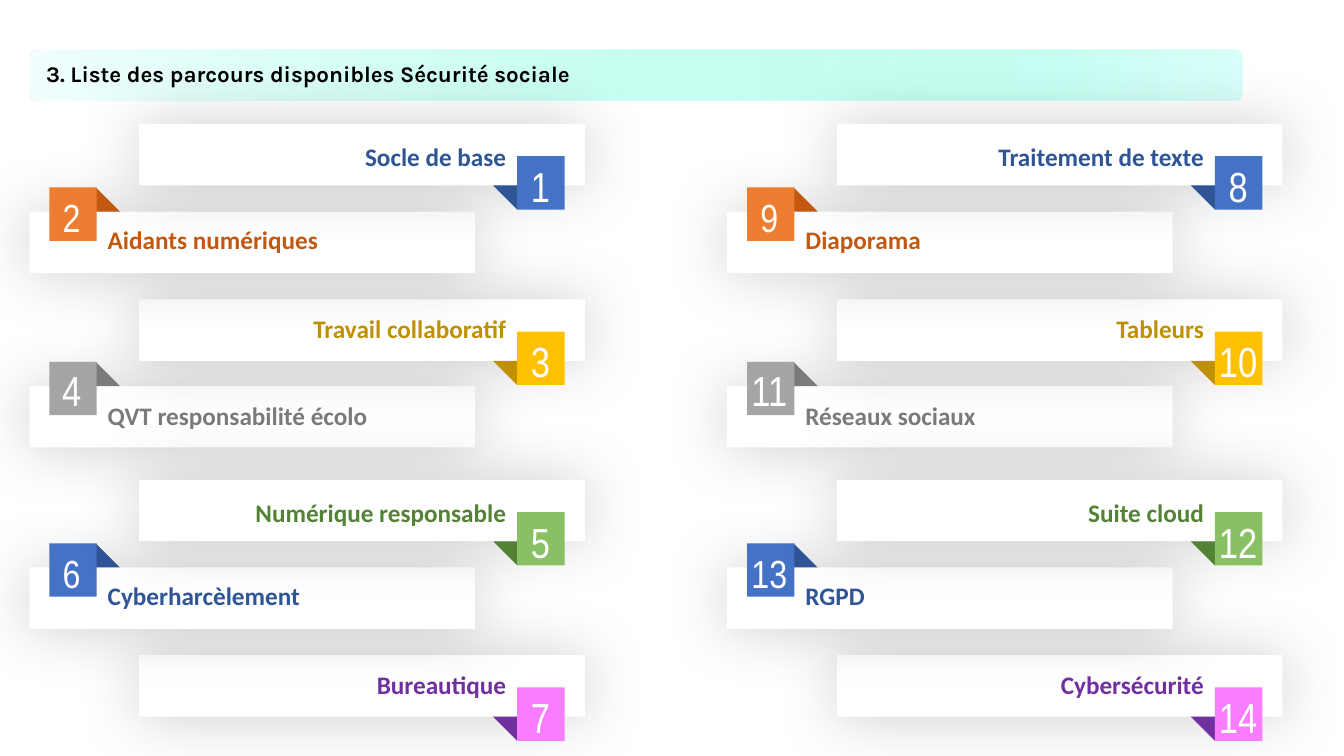
"""Build the slide listing the fourteen training paths in two zigzag columns."""
import pptx
import pptx.dml.color
import pptx.enum.shapes
import pptx.enum.text
import pptx.oxml
import pptx.oxml.ns
import pptx.util

Inches = pptx.util.Inches
RGBColor = pptx.dml.color.RGBColor
Shape = pptx.enum.shapes.MSO_SHAPE
Align = pptx.enum.text.PP_ALIGN

BLACK = RGBColor(0x00, 0x00, 0x00)
WHITE = RGBColor(0xFF, 0xFF, 0xFF)
BLUE = RGBColor(0x44, 0x72, 0xC4)
DARK_BLUE = RGBColor(0x2F, 0x55, 0x97)
ORANGE = RGBColor(0xED, 0x7D, 0x31)
DARK_ORANGE = RGBColor(0xC5, 0x5A, 0x11)
RUST = RGBColor(0xC3, 0x59, 0x11)
YELLOW = RGBColor(0xFF, 0xC0, 0x00)
DARK_YELLOW = RGBColor(0xBF, 0x90, 0x00)
GREY = RGBColor(0xA5, 0xA5, 0xA5)
DARK_GREY = RGBColor(0x7C, 0x7C, 0x7C)
TEXT_GREY = RGBColor(0x7B, 0x7B, 0x7B)
GREEN = RGBColor(0x89, 0xC0, 0x64)
DARK_GREEN = RGBColor(0x54, 0x82, 0x35)
PINK = RGBColor(0xF9, 0x7D, 0xFF)
PURPLE = RGBColor(0x70, 0x30, 0xA0)

TITLE = "3. Liste des parcours disponibles Sécurité sociale"
TITLE_STOPS = [(0, "F3FFFE", 100), (74, "8DFFE4", 50), (83, "8DFFE7", 50), (100, "B3FFF4", 50)]

COLUMNS = [
    (0.29, 1, ["Socle de base", "Aidants numériques", "Travail collaboratif",
               "QVT responsabilité écolo", "Numérique responsable",
               "Cyberharcèlement", "Bureautique"]),
    (7.21, 8, ["Traitement de texte", "Diaporama", "Tableurs", "Réseaux sociaux",
               "Suite cloud", "RGPD", "Cybersécurité"]),
]

# Each row: bar top, label offset, number offset, number size, line spacing, colours
ROWS = [
    (1.23, 0.12, 0.41, 30, 0.8, (BLUE, DARK_BLUE, DARK_BLUE)),
    (2.10, 0.08, -0.23, 28, 1.0, (ORANGE, DARK_ORANGE, RUST)),
    (2.97, 0.09, 0.41, 30, 0.8, (YELLOW, DARK_YELLOW, DARK_YELLOW)),
    (3.83, 0.09, -0.17, 30, 0.8, (GREY, DARK_GREY, TEXT_GREY)),
    (4.76, 0.12, 0.41, 30, 0.8, (GREEN, DARK_GREEN, DARK_GREEN)),
    (5.63, 0.08, -0.23, 28, 1.0, (BLUE, DARK_BLUE, DARK_BLUE)),
    (6.50, 0.09, 0.41, 30, 0.8, (PINK, PURPLE, PURPLE)),
]
STACKING = [3, 2, 1, 0, 6, 5, 4]

LEFT_SIDE = {"bar": 0, "label": 0.68, "badge": (0.2, -0.24), "fold": (0.66, -0.24),
             "turn": 0, "number": 0.08, "align": Align.LEFT}
RIGHT_SIDE = {"bar": 1.09, "label": 1.09, "badge": (4.84, 0.32), "fold": (4.6, 0.61),
              "turn": 180, "number": 4.73, "align": Align.RIGHT}


def drawing_xml(markup):
    """Parse one drawing element."""
    return pptx.oxml.parse_xml(markup.replace(" ", f" {pptx.oxml.ns.nsdecls('a')} ", 1))


def add_block(shapes, kind, left, top, width, height, color=None):
    """Add a preset shape without outline or shadow."""
    block = shapes.add_shape(kind, Inches(left), Inches(top), Inches(width), Inches(height))
    block.shadow.inherit = False
    block.line.fill.background()
    if color is not None:
        block.fill.solid()
        block.fill.fore_color.rgb = color
    return block


def add_text(shapes, text, left, top, width, height, color, align, spacing, **font):
    """Add a one-line text box."""
    box = shapes.add_textbox(Inches(left), Inches(top), Inches(width), Inches(height))
    box.text_frame.word_wrap = True
    box.text_frame.auto_size = pptx.enum.text.MSO_AUTO_SIZE.SHAPE_TO_FIT_TEXT
    para = box.text_frame.paragraphs[0]
    para.alignment = align
    para.line_spacing = spacing
    span = para.add_run()
    span.text = text
    for name, value in font.items():
        setattr(span.font, name, value)
    span.font.color.rgb = color


def add_soft_shadow(block):
    """Surround a block with a wide, faint shadow."""
    effects = block._element.spPr.find(pptx.oxml.ns.qn("a:effectLst"))
    effects.append(drawing_xml(
        f'<a:outerShdw blurRad="{pptx.util.Pt(47)}" dist="0" algn="ctr" rotWithShape="0">'
        '<a:srgbClr val="000000"><a:alpha val="20000"/></a:srgbClr></a:outerShdw>'))


def add_title(shapes):
    """Add the heading on its gradient band."""
    band = add_block(shapes, Shape.ROUNDED_RECTANGLE, 0.29, 0.49, 12.03, 0.51)
    band.fill.gradient()
    band.fill.gradient_angle = 0
    stops = next(band._element.spPr.iter(pptx.oxml.ns.qn("a:gsLst")))
    for stop in list(stops):
        stops.remove(stop)
    for place, color, alpha in TITLE_STOPS:
        stops.append(drawing_xml(
            f'<a:gs pos="{place * 1000}"><a:srgbClr val="{color}">'
            f'<a:alpha val="{alpha * 1000}"/></a:srgbClr></a:gs>'))
    add_text(shapes, TITLE, 0.36, 0.55, 11.67, 0.37, BLACK, Align.LEFT, 1.0,
             name="Karla", size=pptx.util.Pt(16), bold=True)


def add_path(shapes, left, number, label, row, side):
    """Add one bar with its label, folded corner and numbered badge."""
    top, label_drop, number_drop, number_size, spacing, colors = row
    badge_color, fold_color, label_color = colors
    bar = add_block(shapes, Shape.RECTANGLE, left + side["bar"], top, 4.42, 0.61, WHITE)
    add_soft_shadow(bar)
    add_text(shapes, label, left + side["label"], top + label_drop, 3.74, 0.4,
             label_color, side["align"], 1.0,
             name="Calibri", size=pptx.util.Pt(18), bold=True)
    across, down = side["fold"]
    fold = add_block(shapes, Shape.RIGHT_TRIANGLE, left + across, top + down,
                     0.24, 0.24, fold_color)
    fold.rotation = side["turn"]
    across, down = side["badge"]
    add_block(shapes, Shape.RECTANGLE, left + across, top + down, 0.47, 0.53, badge_color)
    add_text(shapes, str(number), left + side["number"], top + number_drop, 0.68, 0.53,
             WHITE, Align.CENTER, spacing,
             name="Arial Narrow", size=pptx.util.Pt(number_size))


def main():
    """Create and save the deck."""
    deck = pptx.Presentation()
    deck.slide_width, deck.slide_height = Inches(13.33), Inches(7.5)
    page = deck.slides.add_slide(deck.slide_layouts[6])
    add_title(page.shapes)
    for left, first, labels in reversed(COLUMNS):
        column = page.shapes.add_group_shape()
        for index in STACKING:
            side = LEFT_SIDE if index % 2 else RIGHT_SIDE
            add_path(column.shapes, left, first + index, labels[index], ROWS[index], side)
    deck.save("out.pptx")


if __name__ == "__main__":
    main()
